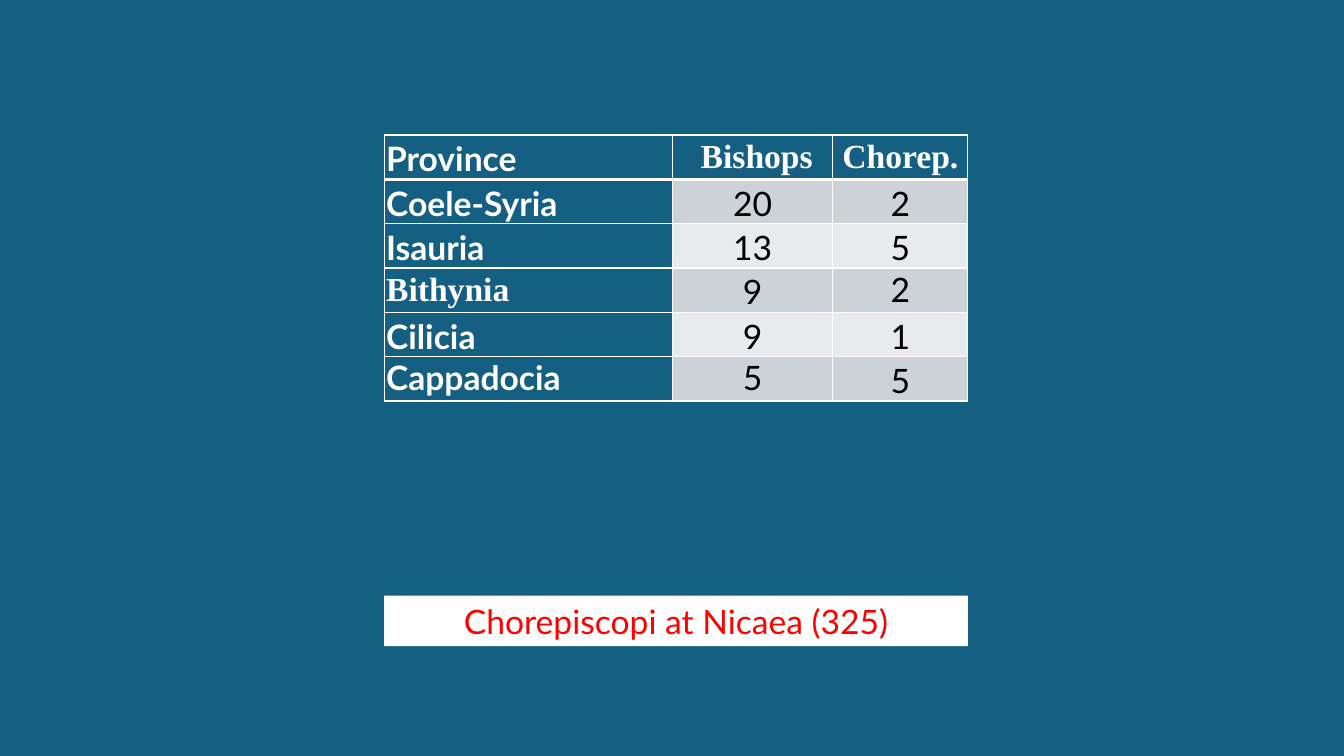
from dataclasses import dataclass

from lxml.etree import SubElement
from pptx import Presentation
from pptx.dml.color import RGBColor
from pptx.enum.text import MSO_ANCHOR, MSO_AUTO_SIZE, PP_ALIGN
from pptx.oxml.ns import qn
from pptx.util import Inches, Pt


@dataclass(frozen=True)
class Theme:
    blue: str = "156082"
    white: str = "FFFFFF"
    black: str = "000000"
    red: str = "FF0000"
    bands: tuple = ("CCD2D8", "E8EAED")
    sans: str = "Lato"
    serif: str = "Times New Roman"
    size: int = 24
    thin: int = 1
    thick: int = 3


SERIF_CELLS = {(0, 1), (0, 2), (3, 0)}
SINGLE_SPACED_CELLS = {(3, 2), (5, 0), (5, 1)}
ROWS = [
    ("Province", " Bishops", "Chorep."),
    ("Coele-Syria", "20", "2"),
    ("Isauria", "13", "5"),
    ("Bithynia", "9", "2"),
    ("Cilicia", "9", "1"),
    ("Cappadocia", "5", "5"),
]


class SlideBuilder:
    def __init__(self, prs, theme):
        self.theme = theme
        self.s = prs.slides.add_slide(prs.slide_layouts[5])
        self.paint(self.s.background.fill, theme.blue)

    def paint(self, fill, color):
        fill.solid()
        fill.fore_color.rgb = RGBColor.from_string(color)

    def style(self, p, color, font, bold=False, align=PP_ALIGN.CENTER):
        p.alignment = align
        p.font.name = font
        p.font.size = Pt(self.theme.size)
        p.font.bold = bold
        p.font.color.rgb = RGBColor.from_string(color)

    def title(self, text, left, top, width, height):
        sp = self.s.shapes.title
        sp.left, sp.top, sp.width, sp.height = map(Inches, (left, top, width, height))
        self.paint(sp.fill, self.theme.white)
        tf = sp.text_frame
        tf.text = text
        tf.auto_size = MSO_AUTO_SIZE.NONE
        tf.vertical_anchor = MSO_ANCHOR.TOP
        p = tf.paragraphs[0]
        p.line_spacing = 1.0
        p.space_before = Pt(0)
        self.style(p, self.theme.red, self.theme.sans)

    def border(self, cell, row):
        """Draw white cell edges, with a thick rule under the header row."""
        thick_edge = {0: "lnB", 1: "lnT"}.get(row)
        tc_pr = cell._tc.get_or_add_tcPr()
        for edge in ("lnL", "lnR", "lnT", "lnB"):
            width = self.theme.thick if edge == thick_edge else self.theme.thin
            ln = SubElement(tc_pr, qn(f"a:{edge}"), w=str(Pt(width)))
            fill = SubElement(ln, qn("a:solidFill"))
            SubElement(fill, qn("a:srgbClr"), val=self.theme.white)

    def cell(self, cell, text, row, col):
        theme = self.theme
        heading = row == 0 or col == 0
        self.border(cell, row)
        self.paint(cell.fill, theme.blue if heading else theme.bands[(row - 1) % 2])
        cell.margin_left = cell.margin_right = Inches(0.02)
        cell.margin_top, cell.margin_bottom = Inches(0.01), Inches(0)
        cell.text = text
        p = cell.text_frame.paragraphs[0]
        self.style(
            p,
            theme.white if heading else theme.black,
            theme.serif if (row, col) in SERIF_CELLS else theme.sans,
            bold=heading,
            align=PP_ALIGN.LEFT if col == 0 else PP_ALIGN.CENTER,
        )
        if (row, col) not in SINGLE_SPACED_CELLS:
            p.line_spacing = 1.07
            p.space_after = Pt(8)

    def table(self, rows, left, top, col_widths, row_height):
        frame = self.s.shapes.add_table(
            len(rows), len(col_widths), Inches(left), Inches(top),
            Inches(sum(col_widths)), Inches(row_height * len(rows)))
        table = frame.table
        for column, width in zip(table.columns, col_widths):
            column.width = Inches(width)
        for r, texts in enumerate(rows):
            for c, text in enumerate(texts):
                self.cell(table.cell(r, c), text, r, c)


def main():
    prs = Presentation()
    prs.slide_width, prs.slide_height = Inches(13.33), Inches(7.5)
    slide = SlideBuilder(prs, Theme())
    slide.table(ROWS, 3.81, 1.34, (2.86, 1.59, 1.34), 0.44)
    slide.title("Chorepiscopi at Nicaea (325)", 3.81, 5.91, 5.79, 0.5)
    prs.save("out.pptx")


if __name__ == "__main__":
    main()
